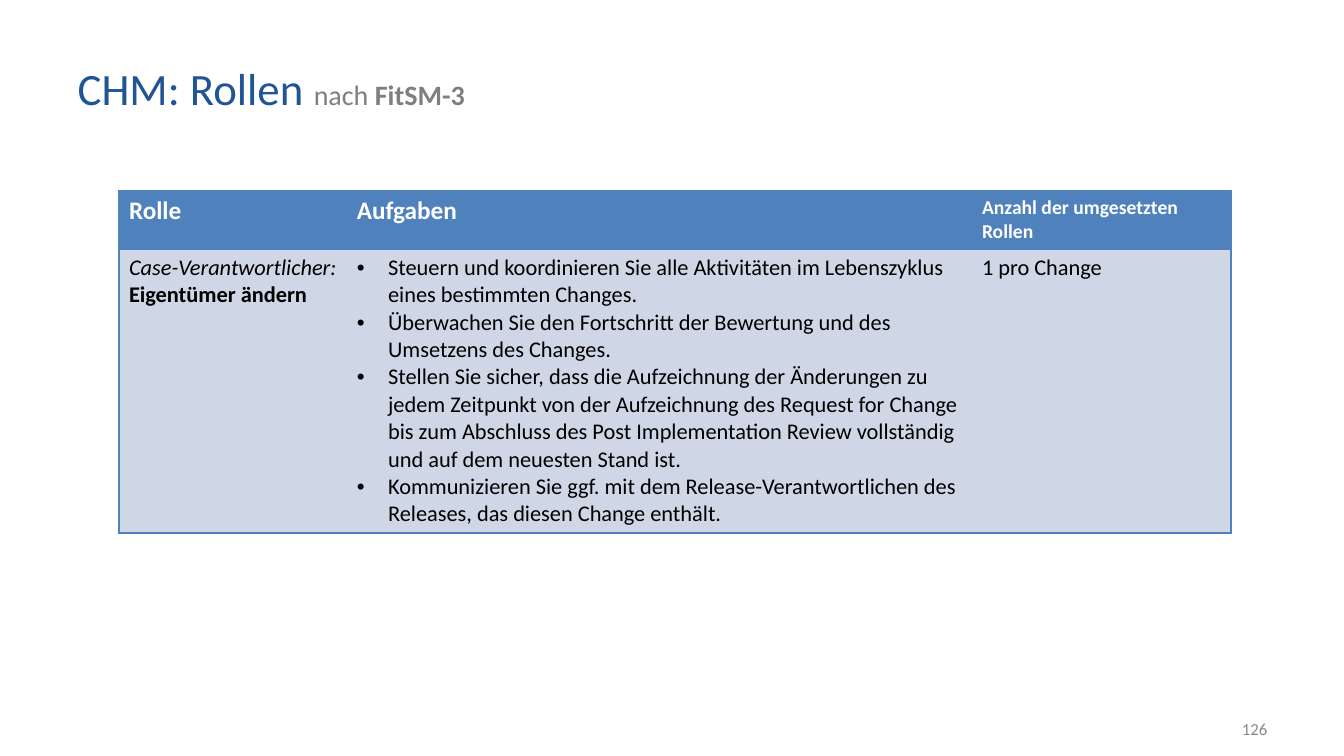
from dataclasses import dataclass

from lxml import etree
from pptx import Presentation
from pptx.dml.color import RGBColor
from pptx.enum.text import MSO_ANCHOR, PP_ALIGN
from pptx.oxml.ns import qn
from pptx.util import Inches, Pt

MIDDLE = MSO_ANCHOR.MIDDLE
LEFT, RIGHT = PP_ALIGN.LEFT, PP_ALIGN.RIGHT
TITLE_ONLY = 5


@dataclass(frozen=True)
class Theme:
    font: str = "Calibri"
    title: str = "205595"
    subtitle: str = "7F7F7F"
    header: str = "4F81BD"
    header_text: str = "FFFFFF"
    body: str = "CFD7E7"
    body_text: str = "000000"
    number: str = "888888"
    title_size: int = 32
    subtitle_size: int = 20
    header_size: int = 18
    small_header_size: int = 14
    body_size: int = 16
    number_size: int = 12
    border_width: float = 0.96


THEME = Theme()
HEADERS = [
    ("Rolle", THEME.header_size),
    ("Aufgaben", THEME.header_size),
    ("Anzahl der umgesetzten Rollen", THEME.small_header_size),
]
TASKS = [
    "Steuern und koordinieren Sie alle Aktivitäten im Lebenszyklus eines bestimmten Changes.",
    "Überwachen Sie den Fortschritt der Bewertung und des Umsetzens des Changes.",
    "Stellen Sie sicher, dass die Aufzeichnung der Änderungen zu jedem Zeitpunkt von der "
    "Aufzeichnung des Request for Change bis zum Abschluss des Post Implementation Review "
    "vollständig und auf dem neuesten Stand ist.",
    "Kommunizieren Sie ggf. mit dem Release-Verantwortlichen des Releases, "
    "das diesen Change enthält.",
]
COLUMN_WIDTHS = [2.26, 6.2, 2.57]
ROW_HEIGHTS = [0.58, 2.81]


def style(font, size, color, bold=False):
    font.name, font.size, font.bold = THEME.font, Pt(size), bold
    font.color.rgb = RGBColor.from_string(color)


def add_bullet(paragraph):
    properties = paragraph._p.get_or_add_pPr()
    indent = Inches(0.31)
    properties.set("marL", str(indent))
    properties.set("indent", str(-indent))
    etree.SubElement(properties, qn("a:buFont"), typeface="Arial")
    etree.SubElement(properties, qn("a:buChar"), char="•")


def set_borders(cell, visible_sides):
    properties = cell._tc.get_or_add_tcPr()
    for position, side in enumerate("LRTB"):
        line = etree.Element(qn(f"a:ln{side}"), w=str(Pt(THEME.border_width)))
        if side in visible_sides:
            fill = etree.SubElement(line, qn("a:solidFill"))
            etree.SubElement(fill, qn("a:srgbClr"), val=THEME.header)
        else:
            etree.SubElement(line, qn("a:noFill"))
        properties.insert(position, line)


def build_title(slide, left, top, width, height):
    title = slide.shapes.title
    title.left, title.top = Inches(left), Inches(top)
    title.width, title.height = Inches(width), Inches(height)
    title.text_frame.vertical_anchor = MIDDLE
    paragraph = title.text_frame.paragraphs[0]
    paragraph.alignment = LEFT
    for text, size, color, bold in [
        ("CHM: Rollen ", THEME.title_size, THEME.title, False),
        ("nach ", THEME.subtitle_size, THEME.subtitle, False),
        ("FitSM-3", THEME.subtitle_size, THEME.subtitle, True),
    ]:
        run = paragraph.add_run()
        run.text = text
        style(run.font, size, color, bold)


def build_roles_table(slide, left, top):
    table = slide.shapes.add_table(
        len(ROW_HEIGHTS), len(COLUMN_WIDTHS), Inches(left), Inches(top),
        Inches(sum(COLUMN_WIDTHS)), Inches(sum(ROW_HEIGHTS)),
    ).table
    for column, width in zip(table.columns, COLUMN_WIDTHS):
        column.width = Inches(width)
    for row, height, color in zip(table.rows, ROW_HEIGHTS, (THEME.header, THEME.body)):
        row.height = Inches(height)
        for cell, sides in zip(row.cells, ("LTB", "TB", "RTB")):
            cell.fill.solid()
            cell.fill.fore_color.rgb = RGBColor.from_string(color)
            set_borders(cell, sides)

    # Header row
    for cell, (text, size) in zip(table.rows[0].cells, HEADERS):
        cell.text = text
        style(cell.text_frame.paragraphs[0].font, size, THEME.header_text, bold=True)

    # Role, tasks and count
    role, tasks, count = table.rows[1].cells
    paragraph = role.text_frame.paragraphs[0]
    for text, bold in [("Case-Verantwortlicher: ", False), ("Eigentümer ändern", True)]:
        run = paragraph.add_run()
        run.text = text
        style(run.font, THEME.body_size, THEME.body_text, bold)
        run.font.italic = not bold
    tasks.text = "\n".join(TASKS)
    for paragraph in tasks.text_frame.paragraphs:
        add_bullet(paragraph)
        style(paragraph.font, THEME.body_size, THEME.body_text)
    count.text = "1 pro Change"
    style(count.text_frame.paragraphs[0].font, THEME.body_size, THEME.body_text)


def build_page_number(slide, left, top, width, height):
    box = slide.shapes.add_textbox(Inches(left), Inches(top), Inches(width), Inches(height))
    frame = box.text_frame
    frame.word_wrap = True
    frame.vertical_anchor = MIDDLE
    paragraph = frame.paragraphs[0]
    paragraph.text = "126"
    paragraph.alignment = RIGHT
    style(paragraph.font, THEME.number_size, THEME.number)


def main():
    presentation = Presentation()
    presentation.slide_width, presentation.slide_height = Inches(13.33), Inches(7.5)
    slide = presentation.slides.add_slide(presentation.slide_layouts[TITLE_ONLY])
    build_title(slide, 0.67, 0.3, 9.9, 1.14)
    build_roles_table(slide, 1.18, 1.89)
    build_page_number(slide, 9.56, 7.03, 3.11, 0.4)
    presentation.save("out.pptx")


if __name__ == "__main__":
    main()
